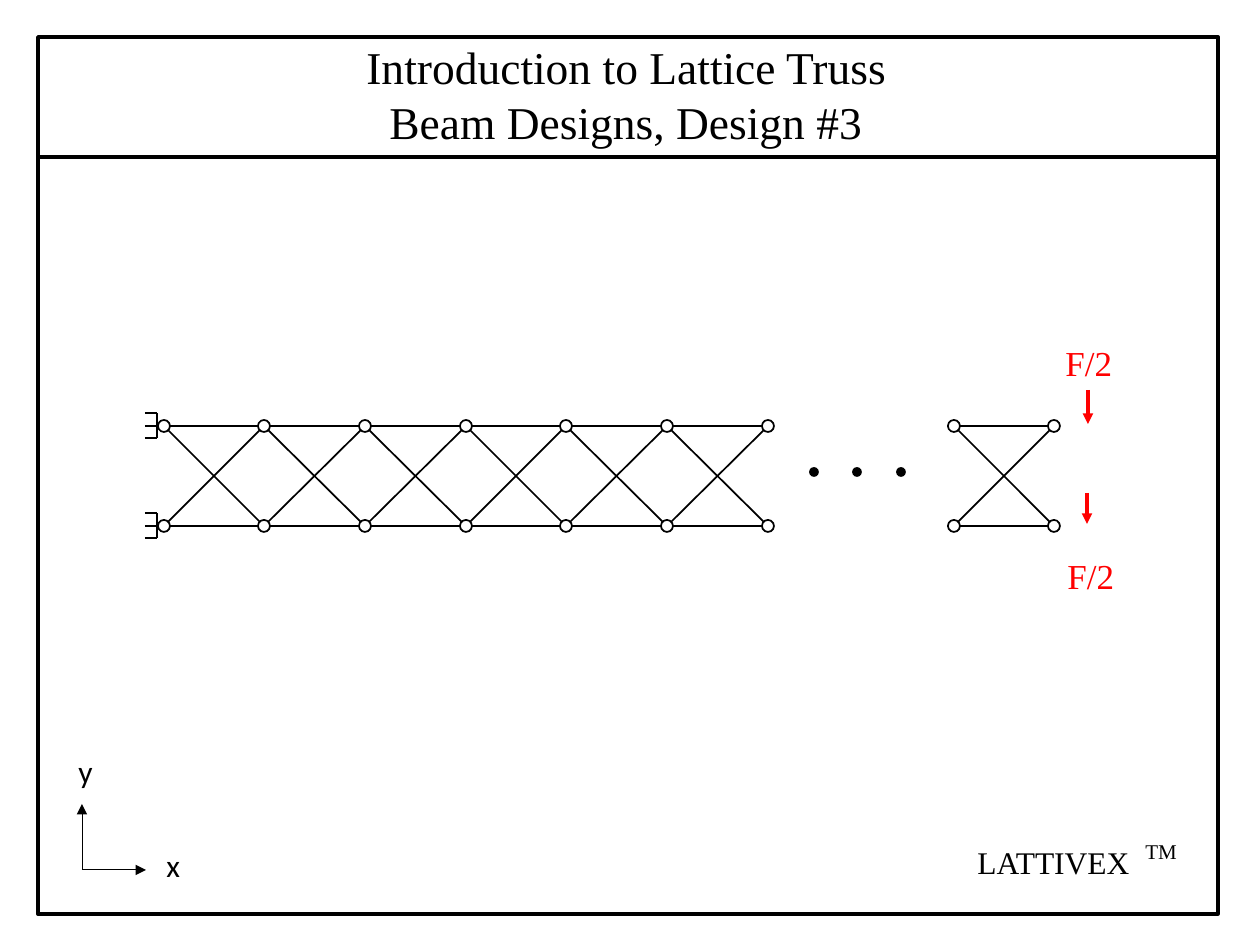
import pptx
import pptx.dml.color
import pptx.enum.shapes
import pptx.enum.text
import pptx.oxml.ns
import pptx.util
from lxml import etree

PX = 914400 // 126
BLACK, WHITE, RED = "000000", "FFFFFF", "FF0000"
SERIF, SANS = "Times New Roman", "Calibri"

FRAME = (38, 37, 1180, 877)
TITLE_RULE_Y = 157

TOP, BOTTOM = 426, 526
MAIN_JOINTS = [164 + 604 * i // 6 for i in range(7)]
END_JOINTS = [954, 1054]
JOINT_SIZE, DOT_SIZE = 12, 8
DOTS = [(814, 472), (857, 472), (901, 472)]
SUPPORT_SPINE, SUPPORT_BACK = -7, -19
SUPPORT_PRONGS = [-13, 0, 12]

# start, end, colour, width in points
ARROWS = [
    ((1088, 390), (1088, 424), RED, 2),
    ((1087, 493), (1087, 524), RED, 2),
    ((82, 870), (146, 870), BLACK, 0.5),
    ((82, 870), (82, 804), BLACK, 0.5),
]
# box, text, size in points, font, colour
LABELS = [
    ((1053, 335, 88, 55), "F/2", 20, SERIF, RED),
    ((1055, 548, 72, 55), "F/2", 20, SERIF, RED),
    ((154, 840, 39, 50), "x", 18, SANS, BLACK),
    ((66, 746, 39, 50), "y", 18, SANS, BLACK),
    ((965, 837, 192, 50), "LATTIVEX", 18, SERIF, BLACK),
]
TRADEMARK = ((1133, 820, 64, 50), "TM", 12, SERIF, BLACK)
TITLE_BOX = (354, 33, 568, 123)
# text, indent
TITLE = [("Introduction to Lattice Truss", 0), ("Beam Designs, Design #3", 23)]

prs = pptx.Presentation()
prs.slide_width, prs.slide_height = 1260 * PX, 945 * PX
slide = prs.slides.add_slide(prs.slide_layouts[6])
shapes = slide.shapes


def emu(lengths):
    return [length * PX for length in lengths]


def rgb(colour):
    return pptx.dml.color.RGBColor.from_string(colour)


def add_line(start, end, colour=BLACK, width=1, arrow=False):
    line = shapes.add_connector(
        pptx.enum.shapes.MSO_CONNECTOR.STRAIGHT, *emu(start + end))
    line.line.color.rgb = rgb(colour)
    line.line.width = pptx.util.Pt(width)
    if arrow:
        tail = etree.SubElement(
            line.line._get_or_add_ln(), pptx.oxml.ns.qn("a:tailEnd"))
        tail.set("type", "triangle")
    etree.SubElement(line._element.spPr, pptx.oxml.ns.qn("a:effectLst"))


def add_outlined(kind, box, fill=None, width=1):
    shape = shapes.add_shape(kind, *emu(box))
    shape.shadow.inherit = False
    if fill:
        shape.fill.solid()
        shape.fill.fore_color.rgb = rgb(fill)
    else:
        shape.fill.background()
    shape.line.color.rgb = rgb(BLACK)
    shape.line.width = pptx.util.Pt(width)


def add_circle(x, y, size, fill):
    add_outlined(pptx.enum.shapes.MSO_SHAPE.OVAL,
                 (x - size // 2, y - size // 2, size, size), fill)


def add_run(paragraph, text, size, font, colour):
    run = paragraph.add_run()
    run.text = text
    run.font.size = pptx.util.Pt(size)
    run.font.name = font
    run.font.color.rgb = rgb(colour)


def add_frame(box):
    frame = shapes.add_textbox(*emu(box)).text_frame
    frame.word_wrap = True
    return frame


def add_label(box, text, size, font, colour):
    frame = add_frame(box)
    add_run(frame.paragraphs[0], text, size, font, colour)
    return frame


def add_truss(joints):
    """Draw chords and crossed diagonals, then the joints on top."""
    for left, right in zip(joints, joints[1:]):
        for y, opposite in ((TOP, BOTTOM), (BOTTOM, TOP)):
            add_line((left, y), (right, y))
            add_line((left, y), (right, opposite))
    for x in joints:
        for y in (TOP, BOTTOM):
            add_circle(x, y, JOINT_SIZE, WHITE)


def add_support(x, y):
    spine, back = x + SUPPORT_SPINE, x + SUPPORT_BACK
    add_line((spine, y + SUPPORT_PRONGS[0]), (spine, y + SUPPORT_PRONGS[-1]))
    for offset in SUPPORT_PRONGS:
        add_line((back, y + offset), (spine, y + offset))


add_truss(MAIN_JOINTS)
add_truss(END_JOINTS)
for support_y in (TOP, BOTTOM):
    add_support(MAIN_JOINTS[0], support_y)
for dot_x, dot_y in DOTS:
    add_circle(dot_x, dot_y, DOT_SIZE, BLACK)

add_outlined(pptx.enum.shapes.MSO_SHAPE.RECTANGLE, FRAME, width=2)
add_line((FRAME[0], TITLE_RULE_Y), (FRAME[0] + FRAME[2], TITLE_RULE_Y), width=2)
for arrow in ARROWS:
    add_line(*arrow, arrow=True)

for label in LABELS:
    add_label(*label)
add_label(*TRADEMARK).vertical_anchor = pptx.enum.text.MSO_ANCHOR.BOTTOM

title = add_frame(TITLE_BOX)
title.add_paragraph()
for paragraph, (text, indent) in zip(title.paragraphs, TITLE):
    paragraph._p.get_or_add_pPr().set("marL", str(indent * PX))
    add_run(paragraph, text, 26, SERIF, BLACK)

prs.save("out.pptx")
